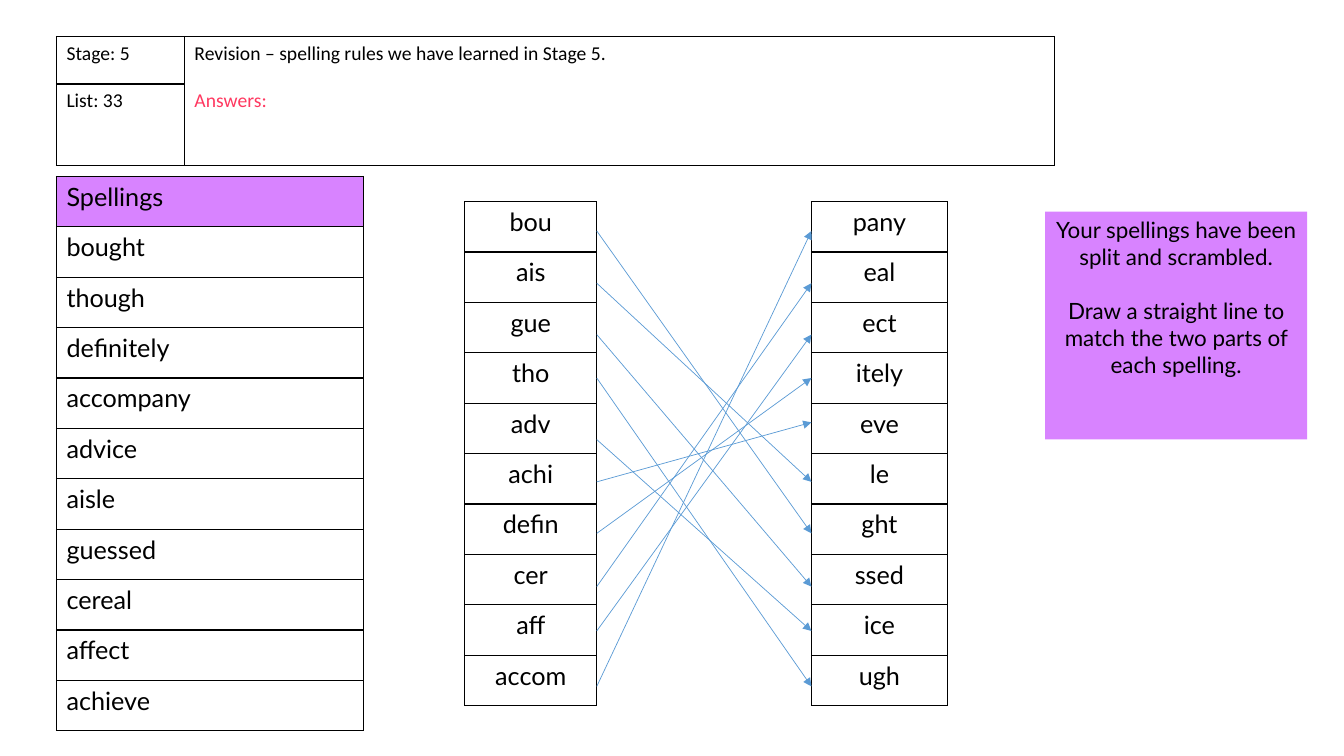
from dataclasses import dataclass

from lxml import etree
from pptx import Presentation
from pptx.dml.color import RGBColor
from pptx.enum.shapes import MSO_CONNECTOR, MSO_SHAPE
from pptx.enum.text import MSO_ANCHOR, PP_ALIGN
from pptx.oxml.ns import qn
from pptx.util import Pt

STRAIGHT = MSO_CONNECTOR.STRAIGHT
RECTANGLE = MSO_SHAPE.RECTANGLE
TOP = MSO_ANCHOR.TOP
LEFT, CENTER = PP_ALIGN.LEFT, PP_ALIGN.CENTER


@dataclass(frozen=True)
class Theme:
    ink: str = "000000"
    violet: str = "D883FF"
    answer: str = "FF3860"
    arrow: str = "5B9BD5"
    header_font: str = "Calibri"
    body_font: str = "Lato"
    header_size: float = 14
    word_size: float = 18
    note_size: float = 16
    border: float = 1
    arrow_width: float = 0.5


class Worksheet:
    def __init__(self, page, theme):
        self.page = page
        self.theme = theme

    def set_text(self, para, text, size, font, color=None, align=LEFT):
        para.text = text
        para.alignment = align
        para.font.size = Pt(size)
        para.font.name = font
        para.font.color.rgb = RGBColor.from_string(color or self.theme.ink)

    def outline(self, cell):
        properties = cell._tc.get_or_add_tcPr()
        for side in ("a:lnL", "a:lnR", "a:lnT", "a:lnB"):
            line = etree.SubElement(properties, qn(side), w=str(Pt(self.theme.border)))
            fill = etree.SubElement(line, qn("a:solidFill"))
            etree.SubElement(fill, qn("a:srgbClr"), val=self.theme.ink)

    def grid(self, left, top, widths, row_count, row_height):
        """Add a table with plain bordered cells."""
        frame = self.page.shapes.add_table(
            row_count, len(widths), Pt(left), Pt(top),
            Pt(sum(widths)), Pt(row_count * row_height))
        table = frame.table
        table.first_row = table.horz_banding = False
        for column, width in zip(table.columns, widths):
            column.width = Pt(width)
        for row in table.rows:
            row.height = Pt(row_height)
            for cell in row.cells:
                self.outline(cell)
                cell.fill.background()
        return table

    def word_list(self, left, top, width, words, align=LEFT):
        table = self.grid(left, top, [width], len(words), ROW_HEIGHT)
        for row, word in enumerate(words):
            para = table.cell(row, 0).text_frame.paragraphs[0]
            self.set_text(para, word, self.theme.word_size, self.theme.body_font, align=align)
        return table

    def header(self, left, top, widths, row_height, labels, title, subtitle):
        theme = self.theme
        table = self.grid(left, top, widths, len(labels), row_height)
        for row, label in enumerate(labels):
            para = table.cell(row, 0).text_frame.paragraphs[0]
            self.set_text(para, label, theme.header_size, theme.header_font)
        topic = table.cell(0, 1)
        topic.merge(table.cell(1, 1))
        self.set_text(topic.text_frame.paragraphs[0], title, theme.header_size, theme.header_font)
        para = topic.text_frame.add_paragraph()
        self.set_text(para, subtitle, theme.header_size, theme.header_font, theme.answer)
        para.space_before = Pt(17)

    def note(self, left, top, width, height, texts):
        theme = self.theme
        box = self.page.shapes.add_shape(RECTANGLE, Pt(left), Pt(top), Pt(width), Pt(height))
        box.shadow.inherit = False
        box.fill.solid()
        box.fill.fore_color.rgb = RGBColor.from_string(theme.violet)
        box.line.fill.background()
        frame = box.text_frame
        frame.word_wrap = True
        frame.vertical_anchor = TOP
        for index, text in enumerate(texts):
            para = frame.add_paragraph() if index else frame.paragraphs[0]
            self.set_text(para, text, theme.note_size, theme.body_font, align=CENTER)
            if index:
                para.space_before = Pt(19.2)

    def arrow(self, start_x, start_y, end_x, end_y):
        connector = self.page.shapes.add_connector(
            STRAIGHT, Pt(start_x), Pt(start_y), Pt(end_x), Pt(end_y))
        connector.line.width = Pt(self.theme.arrow_width)
        connector.line.color.rgb = RGBColor.from_string(self.theme.arrow)
        properties = connector._element.spPr
        etree.SubElement(properties.find(qn("a:ln")), qn("a:tailEnd"), type="triangle")
        etree.SubElement(properties, qn("a:effectLst"))


ROW_HEIGHT = 36
MARGIN = 40.3
LIST_TOP = 144
STARTS_LEFT, STARTS_WIDTH = 332, 94.3
ENDINGS_LEFT, ENDINGS_WIDTH = 579.6, 97.2

SPELLINGS = ["bought", "though", "definitely", "accompany", "advice",
             "aisle", "guessed", "cereal", "affect", "achieve"]
STARTS = ["bou", "ais", "gue", "tho", "adv", "achi", "defin", "cer", "aff", "accom"]
ENDINGS = ["pany", "eal", "ect", "itely", "eve", "le", "ght", "ssed", "ice", "ugh"]
START_HEIGHTS = [165, 202.3, 239, 270, 314, 344.2, 381, 419, 450.7, 490.3]
END_HEIGHTS = [165, 202.3, 239, 270, 301.7, 344.2, 381, 419, 450.7, 490.3]


def matching_row(start):
    """Return the row of the ending that completes a spelling."""
    word = next(word for word in SPELLINGS if word.startswith(start))
    return ENDINGS.index(word[len(start):])


def main():
    deck = Presentation()
    deck.slide_width, deck.slide_height = Pt(960), Pt(540)
    theme = Theme()
    sheet = Worksheet(deck.slides.add_slide(deck.slide_layouts[6]), theme)

    spellings = sheet.word_list(MARGIN, 126, 219.6, ["Spellings"] + SPELLINGS)
    heading = spellings.cell(0, 0)
    heading.fill.solid()
    heading.fill.fore_color.rgb = RGBColor.from_string(theme.violet)

    sheet.header(MARGIN, 26, [91.4, 621.4], 34, ["Stage: 5", "List: 33"],
                 "Revision – spelling rules we have learned in Stage 5.", "Answers:")
    sheet.word_list(STARTS_LEFT, LIST_TOP, STARTS_WIDTH, STARTS, CENTER)
    sheet.word_list(ENDINGS_LEFT, LIST_TOP, ENDINGS_WIDTH, ENDINGS, CENTER)
    sheet.note(746.6, 151.2, 187.2, 162.7, [
        "Your spellings have been split and scrambled.",
        "Draw a straight line to match the two parts of each spelling."])

    for start, height in zip(STARTS, START_HEIGHTS):
        sheet.arrow(STARTS_LEFT + STARTS_WIDTH, height,
                    ENDINGS_LEFT, END_HEIGHTS[matching_row(start)])

    deck.save("out.pptx")


if __name__ == "__main__":
    main()
